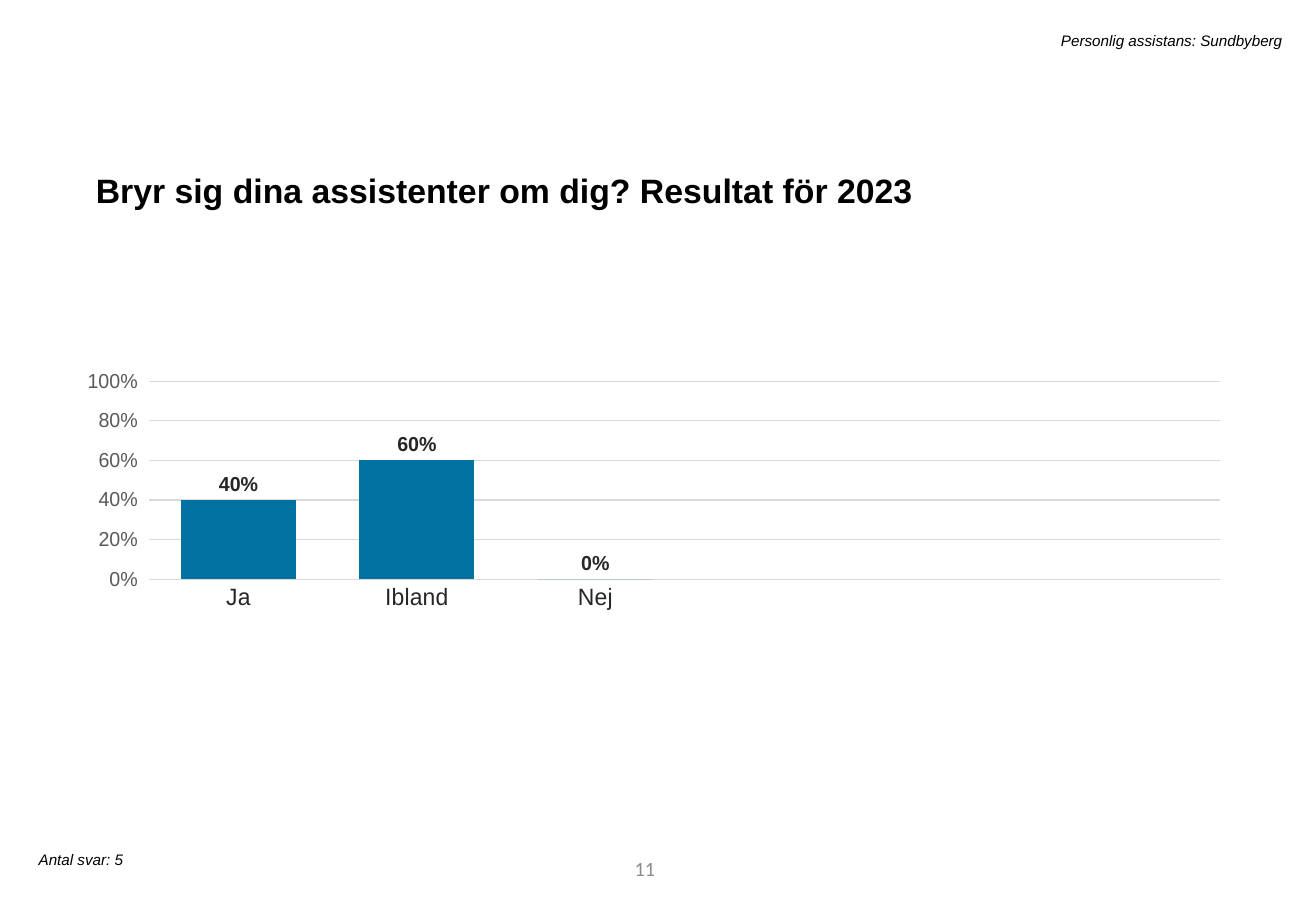
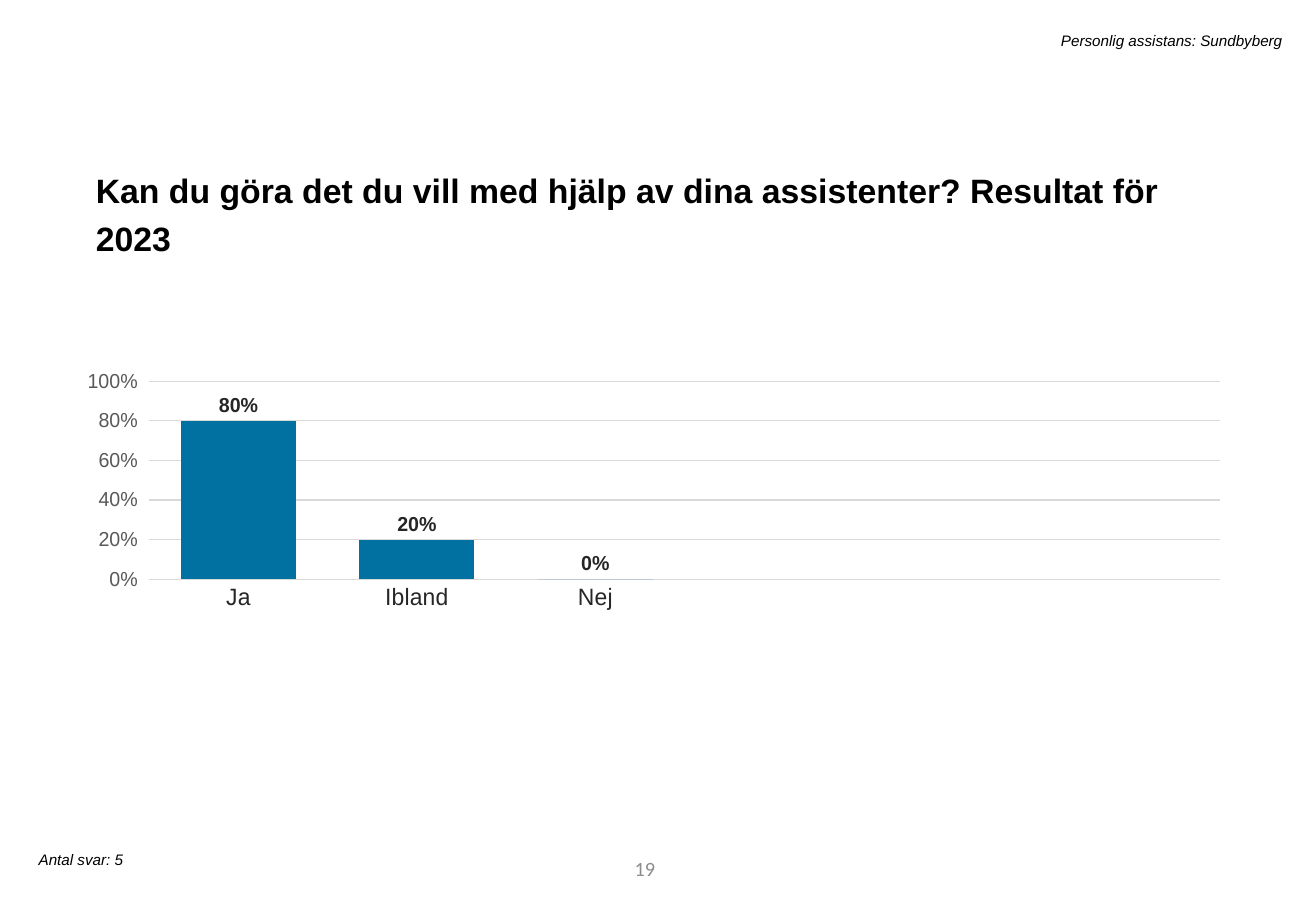
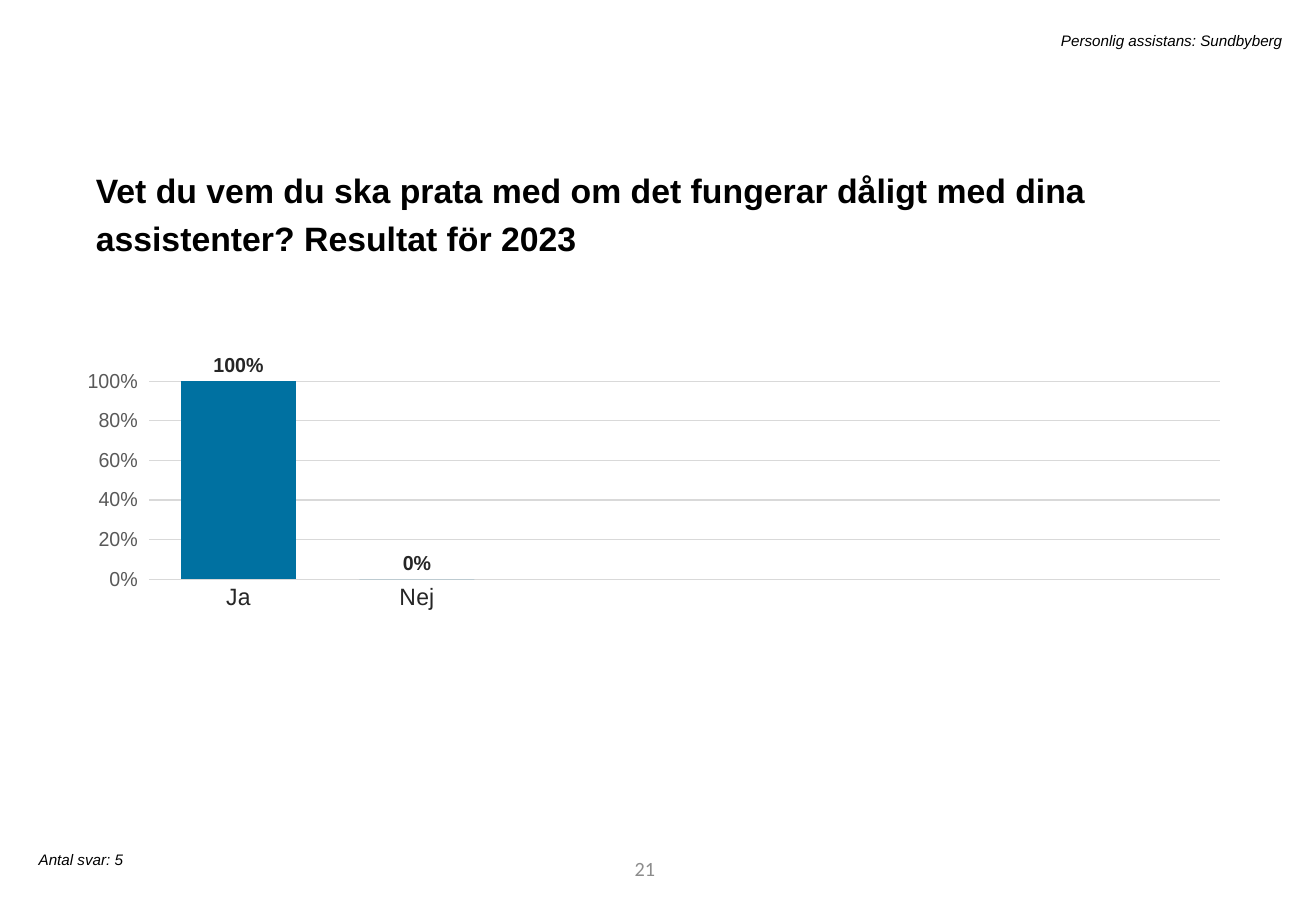
from lxml.etree import SubElement
from pptx import Presentation
from pptx.chart.data import CategoryChartData
from pptx.dml.color import RGBColor
from pptx.enum.chart import XL_CHART_TYPE as ChartType
from pptx.enum.chart import XL_LABEL_POSITION as LabelPosition
from pptx.enum.chart import XL_TICK_MARK as TickMark
from pptx.enum.text import MSO_ANCHOR as Anchor
from pptx.enum.text import MSO_AUTO_SIZE as AutoSize
from pptx.enum.text import PP_ALIGN as Align
from pptx.oxml.ns import qn
from pptx.util import Inches, Pt

BLACK, DARK, GRAY = "000000", "262626", "595959"
NUMBER_GRAY, GRID_GRAY, BAR_BLUE = "8C8C8C", "D9D9D9", "0071A1"
TITLE = {"name": "Arial", "size": Pt(20), "bold": True}
NOTE = {"name": "Arial", "size": Pt(9), "italic": True}
PAGE_NUMBER = {"name": "Calibri", "size": Pt(12)}
CATEGORY_SLOTS = 6
PLOT_AREA = {"x": 0.025, "y": 0.154, "w": 0.966, "h": 0.413}

RESULTS = [
    (11, "Bryr sig dina assistenter om dig?", {"Ja": 0.4, "Ibland": 0.6, "Nej": 0}),
    (19, "Kan du göra det du vill med hjälp av dina assistenter?",
     {"Ja": 0.8, "Ibland": 0.2, "Nej": 0}),
    (21, "Vet du vem du ska prata med om det fungerar dåligt med dina assistenter?",
     {"Ja": 1, "Nej": 0}),
]


def set_values(target, values):
    for name, value in values.items():
        setattr(target, name, value)


def paint(color_format, color):
    color_format.rgb = RGBColor.from_string(color)


def set_font(font, values, color):
    set_values(font, values)
    paint(font.color, color)


def set_line(line, color):
    line.width = Pt(0.75)
    paint(line.color, color)


def add_text(slide, text, box, font, color=BLACK, frame=None, layout=None):
    shape = slide.shapes.add_textbox(*map(Inches, box))
    text_frame = shape.text_frame
    set_values(text_frame, {"word_wrap": True, **(frame or {})})
    paragraph = text_frame.paragraphs[0]
    set_values(paragraph, layout or {})
    run = paragraph.add_run()
    run.text = text
    set_font(run.font, font, color)


def place_plot_area(chart):
    plot_area = chart.plots[0]._element.getparent()
    for old_layout in plot_area.findall(qn("c:layout")):
        plot_area.remove(old_layout)
    layout = SubElement(plot_area, qn("c:layout"))
    plot_area.insert(0, layout)
    manual = SubElement(layout, qn("c:manualLayout"))
    settings = {"layoutTarget": "inner", "xMode": "edge", "yMode": "edge", **PLOT_AREA}
    for name, value in settings.items():
        SubElement(manual, qn(f"c:{name}")).set("val", str(value))


def style_axes(chart):
    category_axis, value_axis = chart.category_axis, chart.value_axis
    set_values(category_axis, {"major_tick_mark": TickMark.NONE,
                               "has_major_gridlines": False})
    set_font(category_axis.tick_labels.font, {"name": "Arial", "size": Pt(14)}, DARK)
    set_line(category_axis.format.line, GRID_GRAY)
    set_values(value_axis, {"minimum_scale": 0, "maximum_scale": 1, "major_unit": 0.2,
                            "major_tick_mark": TickMark.OUTSIDE,
                            "has_major_gridlines": True})
    set_values(value_axis.tick_labels, {"number_format": "0%",
                                        "number_format_is_linked": False})
    set_font(value_axis.tick_labels.font, {"name": "Arial", "size": Pt(12)}, GRAY)
    value_axis.format.line.fill.background()
    set_line(value_axis.major_gridlines.format.line, GRID_GRAY)


def add_result_chart(slide, shares):
    padding = CATEGORY_SLOTS - len(shares)
    data = CategoryChartData(number_format="0%")
    data.categories = [*shares, *[""] * padding]
    data.add_series("Series 1", [*shares.values(), *[None] * padding])
    box = map(Inches, (0.72, 2.53, 9.4, 3.95))
    chart = slide.shapes.add_chart(ChartType.COLUMN_CLUSTERED, *box, data).chart
    set_values(chart, {"has_title": False, "has_legend": False})
    set_font(chart.font, {"name": "Arial", "size": Pt(10)}, BLACK)
    plot = chart.plots[0]
    set_values(plot, {"gap_width": 55, "vary_by_categories": False})
    series = plot.series[0]
    series.format.fill.solid()
    paint(series.format.fill.fore_color, BAR_BLUE)
    labels = series.data_labels
    set_values(labels, {"show_value": True, "position": LabelPosition.OUTSIDE_END,
                        "number_format": "0%", "number_format_is_linked": False})
    set_font(labels.font, {"name": "Arial", "size": Pt(12), "bold": True}, DARK)
    style_axes(chart)
    place_plot_area(chart)


def add_result_slide(presentation, number, question, shares):
    slide = presentation.slides.add_slide(presentation.slide_layouts[6])
    fitted = {"auto_size": AutoSize.SHAPE_TO_FIT_TEXT}
    add_text(slide, str(number), (3.05, 6.95, 2.44, 0.4), PAGE_NUMBER, NUMBER_GRAY,
             {"vertical_anchor": Anchor.MIDDLE}, {"alignment": Align.RIGHT})
    add_text(slide, f"{question} Resultat för 2023", (0.69, 1.28, 9.4, 0.47), TITLE,
             frame=fitted, layout={"line_spacing": 1.2, "space_before": Pt(10)})
    add_result_chart(slide, shares)
    add_text(slide, "Antal svar: 5", (0.22, 6.95, 2.84, 0.25), NOTE, frame=fitted)
    add_text(slide, "Personlig assistans: Sundbyberg", (1.79, 0.21, 8.86, 0.25), NOTE,
             frame=fitted, layout={"alignment": Align.RIGHT})


def main():
    presentation = Presentation()
    set_values(presentation, {"slide_width": Inches(10.83), "slide_height": Inches(7.5)})
    for number, question, shares in RESULTS:
        add_result_slide(presentation, number, question, shares)
    presentation.save("out.pptx")


if __name__ == "__main__":
    main()
